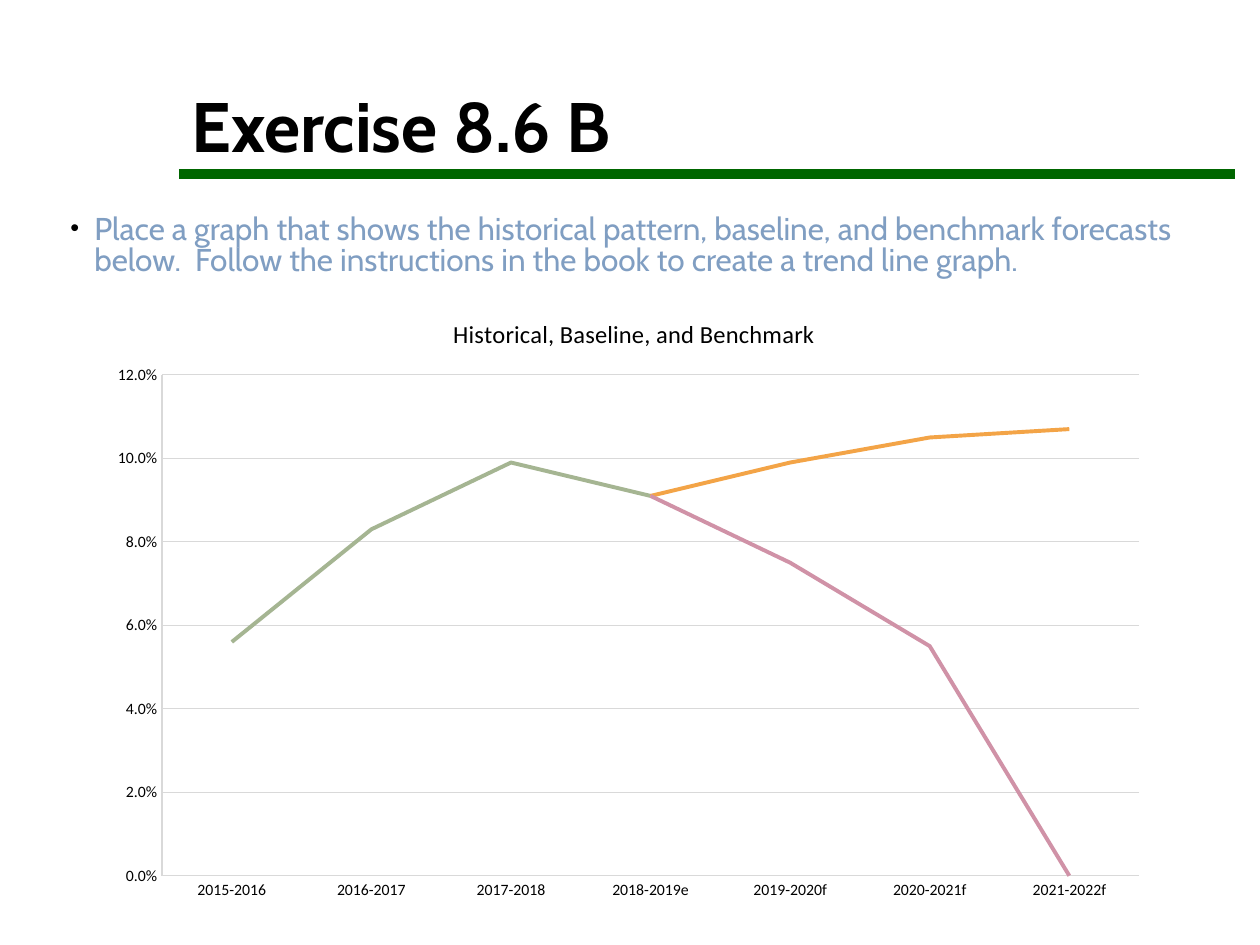
from lxml import etree
from pptx import Presentation
from pptx.chart.data import CategoryChartData
from pptx.dml.color import RGBColor
from pptx.enum.chart import XL_CHART_TYPE as ChartType, XL_MARKER_STYLE as Marker, XL_TICK_MARK as Tick
from pptx.enum.shapes import MSO_CONNECTOR as Connector
from pptx.enum.text import MSO_ANCHOR as Anchor, MSO_AUTO_SIZE as AutoSize, PP_ALIGN as Align
from pptx.oxml.ns import qn
from pptx.util import Pt

SCALE = 9144
COLORS = {
    "title": "000000",
    "rule": "006600",
    "body": "809EC2",
    "grid": "D9D9D9",
    "history": "A5B592",
    "baseline": "F3A447",
    "benchmark": "D092A7",
}
YEARS = ["2015-2016", "2016-2017", "2017-2018", "2018-2019e",
         "2019-2020f", "2020-2021f", "2021-2022f"]
SERIES = [
    ("Series 1", "history", [0.056, 0.083, 0.099, 0.091, None, None, None]),
    ("Series 2", "baseline", [None, None, None, 0.091, 0.099, 0.105, 0.107]),
    ("Series 3", "benchmark", [None, None, None, 0.091, 0.075, 0.055, 0]),
]


def px(*lengths):
    return [length * SCALE for length in lengths]


def color(name):
    return RGBColor.from_string(COLORS[name])


def add_element(parent, tag, **attributes):
    return etree.SubElement(parent, qn(tag), attributes)


def set_layout(parent, index, **fractions):
    for old in parent.findall(qn("c:layout")):
        parent.remove(old)
    layout = etree.Element(qn("c:layout"))
    parent.insert(index, layout)
    manual = add_element(layout, "c:manualLayout")
    if "w" in fractions:
        add_element(manual, "c:layoutTarget", val="inner")
    for side in ("x", "y"):
        add_element(manual, f"c:{side}Mode", val="edge")
    for side, value in fractions.items():
        add_element(manual, f"c:{side}", val=str(value))


class SlideBuilder:
    text_font = "Cabin"
    chart_font = "Calibri"

    def __init__(self, deck):
        self.page = deck.slides.add_slide(deck.slide_layouts[5])

    def style(self, font, name, size, color_name, bold=False):
        font.name = name
        font.size = Pt(size)
        font.bold = bold
        font.color.rgb = color(color_name)

    def stroke(self, line, color_name, width):
        line.color.rgb = color(color_name)
        line.width = Pt(width)

    def title(self, text, left, top, width, height):
        box = self.page.shapes.title
        box.left, box.top, box.width, box.height = px(left, top, width, height)
        frame = box.text_frame
        frame.text = text
        frame.auto_size = AutoSize.NONE
        frame.vertical_anchor = Anchor.BOTTOM
        para = frame.paragraphs[0]
        para.alignment = Align.LEFT
        para.line_spacing = 0.9
        self.style(para.runs[0].font, self.text_font, 40, "title", True)

    def rule(self, left, top, right):
        line = self.page.shapes.add_connector(Connector.STRAIGHT, *px(left, top, right, top))
        self.stroke(line.line, "rule", 6)
        add_element(line._element.spPr, "a:effectLst")

    def bullet(self, text, left, top, width, height):
        box = self.page.shapes.add_textbox(*px(left, top, width, height))
        frame = box.text_frame
        frame.word_wrap = True
        frame.text = text
        para = frame.paragraphs[0]
        para.line_spacing = 0.8
        properties = para._p.get_or_add_pPr()
        indent, hanging = px(23, -19)
        properties.set("marL", str(indent))
        properties.set("indent", str(hanging))
        bullet_color = add_element(properties, "a:buClr")
        add_element(bullet_color, "a:srgbClr", val=COLORS["title"])
        add_element(properties, "a:buSzPct", val="80000")
        add_element(properties, "a:buFont", typeface="Arial")
        add_element(properties, "a:buChar", char="•")
        self.style(para.runs[0].font, self.text_font, 18, "body")

    def axis(self, axis):
        axis.major_tick_mark = axis.minor_tick_mark = Tick.NONE
        self.stroke(axis.format.line, "grid", 0.75)
        self.style(axis.tick_labels.font, self.chart_font, 9, "title")

    def line_chart(self, heading, left, top, width, height):
        data = CategoryChartData(number_format="0.0%")
        data.categories = YEARS
        for name, _, values in SERIES:
            data.add_series(name, values)
        chart = self.page.shapes.add_chart(
            ChartType.LINE, *px(left, top, width, height), data).chart
        self.style(chart.font, self.chart_font, 10, "title")
        chart.has_legend = False

        chart.has_title = True
        chart_title = chart.chart_title
        chart_title.text_frame.text = heading
        chart_title.include_in_layout = False
        span = chart_title.text_frame.paragraphs[0].runs[0]
        self.style(span.font, self.chart_font, 14, "title")
        set_layout(chart_title._element, 1, x=0.33, y=0.04)

        self.axis(chart.category_axis)
        values_axis = chart.value_axis
        self.axis(values_axis)
        values_axis.minimum_scale = 0
        values_axis.maximum_scale = 0.12
        values_axis.major_unit = 0.02
        values_axis.has_major_gridlines = True
        self.stroke(values_axis.major_gridlines.format.line, "grid", 0.75)
        values_axis.tick_labels.number_format = "0.0%"
        values_axis.tick_labels.number_format_is_linked = False

        plot = chart.plots[0]
        plot.vary_by_categories = False
        for series, (_, color_name, _) in zip(plot.series, SERIES):
            series.smooth = False
            series.marker.style = Marker.NONE
            self.stroke(series.format.line, color_name, 2.25)
        plot_area = chart._chartSpace.find(".//" + qn("c:plotArea"))
        set_layout(plot_area, 0, x=0.06, y=0.14, w=0.92, h=0.8)


def main():
    deck = Presentation()
    deck.slide_width, deck.slide_height = px(1000, 750)
    slide = SlideBuilder(deck)
    slide.rule(142, 138, 980)
    slide.title("Exercise 8.6 B", 142, 25, 839, 113)
    slide.bullet(
        "Place a graph that shows the historical pattern, baseline, and benchmark "
        "forecasts below.  Follow the instructions in the book to create a trend "
        "line graph.", 42, 167, 939, 58)
    slide.line_chart("Historical, Baseline, and Benchmark", 78, 228, 843, 497)
    deck.save("out.pptx")


if __name__ == "__main__":
    main()
